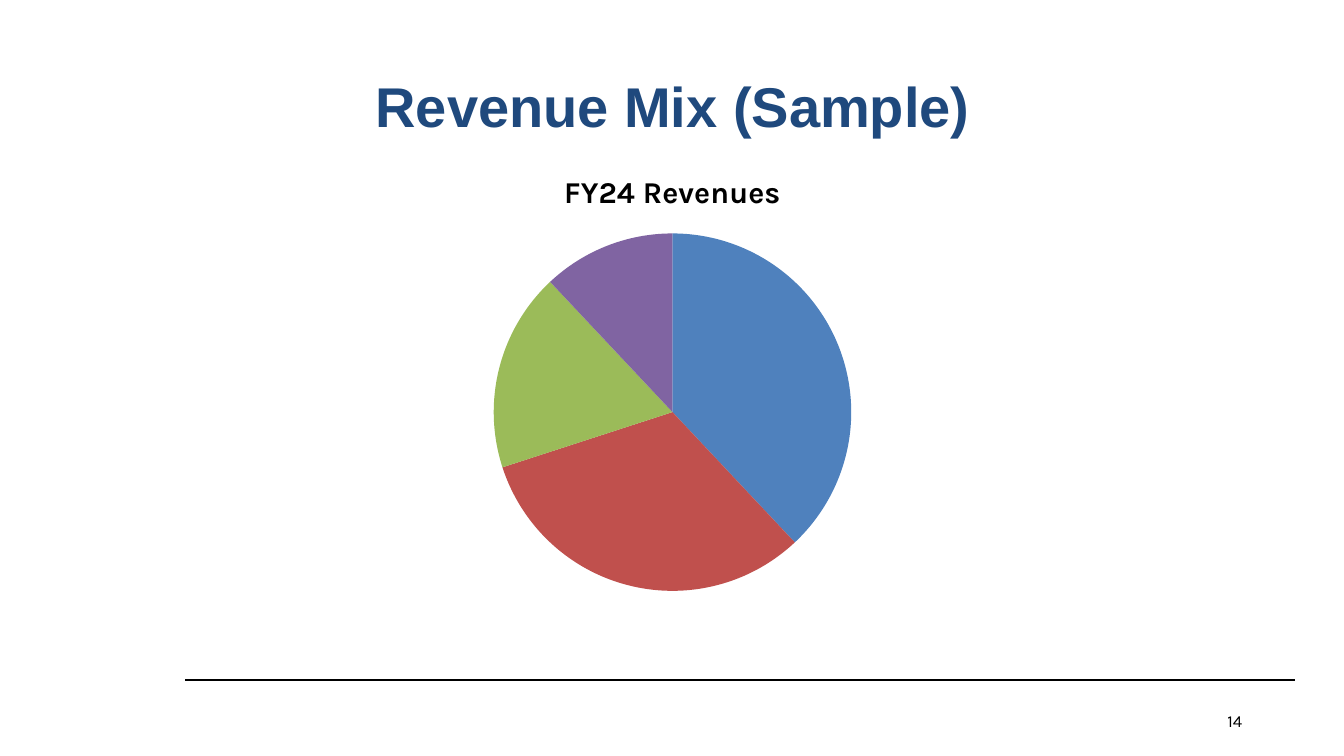
from dataclasses import dataclass
from typing import Any

from lxml import etree
from pptx import Presentation
from pptx.chart.data import CategoryChartData
from pptx.dml.color import RGBColor
from pptx.enum.chart import XL_CHART_TYPE
from pptx.enum.shapes import MSO_CONNECTOR
from pptx.enum.text import MSO_ANCHOR, PP_ALIGN
from pptx.oxml.ns import qn
from pptx.util import Emu, Pt

PIE = XL_CHART_TYPE.PIE
STRAIGHT = MSO_CONNECTOR.STRAIGHT
TOP, MIDDLE = MSO_ANCHOR.TOP, MSO_ANCHOR.MIDDLE
CENTER, RIGHT = PP_ALIGN.CENTER, PP_ALIGN.RIGHT

EMU_PER_PX = 9144
COLORS = {
    "black": "000000",
    "navy": "1F497D",
    "blue": "4F81BD",
    "red": "C0504D",
    "green": "9BBB59",
    "purple": "8064A2",
}


@dataclass(frozen=True)
class Label:
    text: str
    box: tuple[int, int, int, int]
    align: PP_ALIGN
    anchor: MSO_ANCHOR
    color: str
    font: dict[str, Any]


@dataclass(frozen=True)
class Slice:
    category: str
    value: int
    color: str


LABELS = [
    Label("14", (942, 695, 300, 40), RIGHT, MIDDLE, "black",
          {"name": "Karla", "size": Pt(12)}),
    Label("Revenue Mix (Sample)", (42, 66, 1250, 125), CENTER, TOP, "navy",
          {"name": "Arial", "size": Pt(40), "bold": True}),
]
SLICES = [
    Slice("1", 38, "blue"),
    Slice("2", 32, "red"),
    Slice("3", 18, "green"),
    Slice("4", 12, "purple"),
]
CHART_TITLE = "FY24 Revenues"
CHART_BOX = (267, 150, 800, 450)
CHART_FONT = {"name": "Karla", "size": Pt(18)}
CHART_TITLE_FONT = {"name": "Karla", "size": Pt(21.6), "bold": True}
FOOTER_RULE = (184, 675, 1284, 675)


def px(*lengths: int) -> list[Emu]:
    return [Emu(n * EMU_PER_PX) for n in lengths]


def rgb(color: str) -> RGBColor:
    return RGBColor.from_string(COLORS[color])


def set_font(font: Any, values: dict[str, Any], color: str) -> None:
    for name, value in values.items():
        setattr(font, name, value)
    font.color.rgb = rgb(color)


def add_label(s: Any, label: Label) -> None:
    tf = s.shapes.add_textbox(*px(*label.box)).text_frame
    tf.word_wrap = True
    tf.vertical_anchor = label.anchor
    p = tf.paragraphs[0]
    p.alignment = label.align
    r = p.add_run()
    r.text = label.text
    set_font(r.font, label.font, label.color)


def add_rule(s: Any, ends: tuple[int, int, int, int]) -> None:
    sp = s.shapes.add_connector(STRAIGHT, *px(*ends))
    sp.line.width = Pt(1.5)
    sp.line.color.rgb = rgb("black")
    etree.SubElement(sp._element.spPr, qn("a:effectLst"))


def add_pie(s: Any, slices: list[Slice]) -> None:
    data = CategoryChartData()
    data.categories = [item.category for item in slices]
    data.add_series(CHART_TITLE, [item.value for item in slices])
    chart = s.shapes.add_chart(PIE, *px(*CHART_BOX), data).chart
    set_font(chart.font, CHART_FONT, "black")
    chart.has_legend = False
    chart.has_title = True
    r = chart.chart_title.text_frame.paragraphs[0].add_run()
    r.text = CHART_TITLE
    set_font(r.font, CHART_TITLE_FONT, "black")
    chart.chart_title.include_in_layout = False
    plot = chart.plots[0]
    plot.vary_by_categories = True
    for i, item in enumerate(slices):
        fill = plot.series[0].points[i].format.fill
        fill.solid()
        fill.fore_color.rgb = rgb(item.color)


def main() -> None:
    prs = Presentation()
    prs.slide_width, prs.slide_height = px(1333, 750)
    s = prs.slides.add_slide(prs.slide_layouts[6])
    add_rule(s, FOOTER_RULE)
    for label in LABELS:
        add_label(s, label)
    add_pie(s, SLICES)
    prs.save("out.pptx")


if __name__ == "__main__":
    main()
